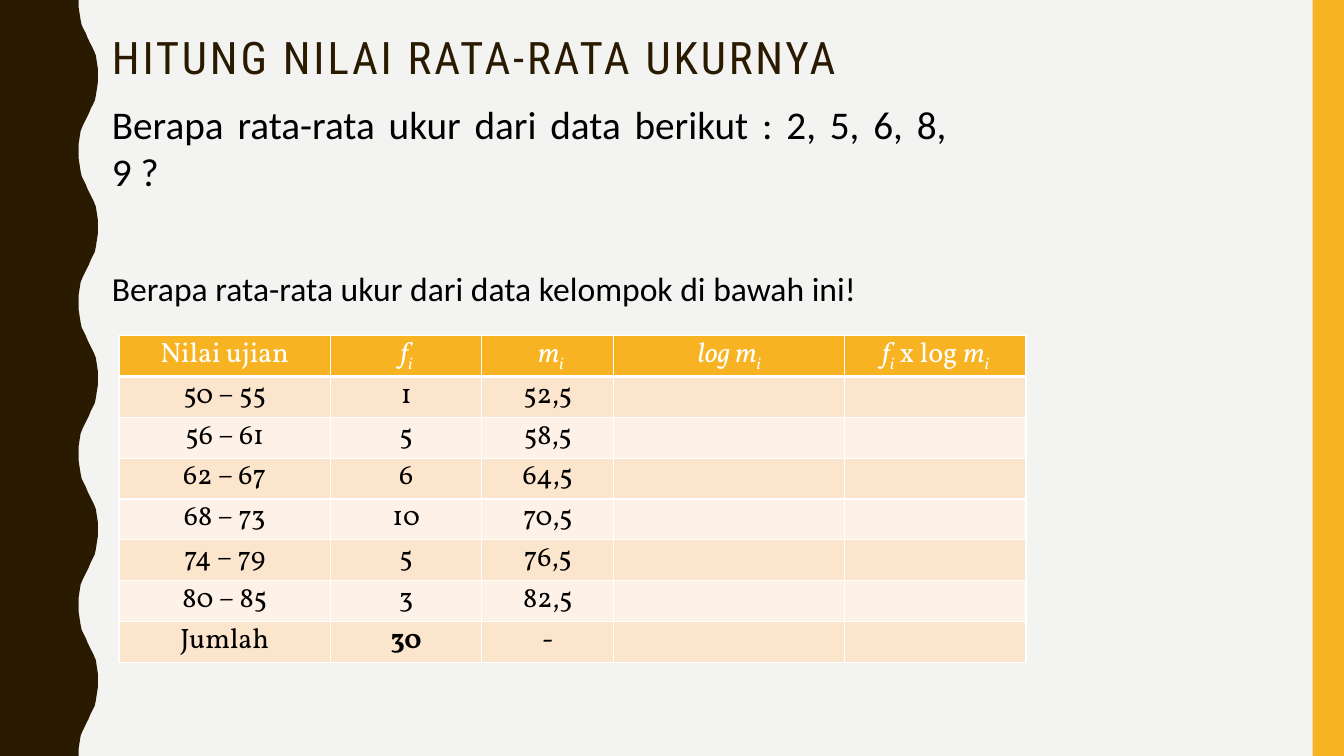
import lxml.etree
import pptx
import pptx.dml.color
import pptx.enum.shapes
import pptx.enum.text
import pptx.oxml.ns
import pptx.util

RGB = pptx.dml.color.RGBColor
PAPER = RGB(0xF3, 0xF3, 0xF2)
BROWN = RGB(0x2A, 0x1A, 0x00)
GOLD = RGB(0xF8, 0xB3, 0x23)
PEACH = RGB(0xFC, 0xE5, 0xCD)
CREAM = RGB(0xFE, 0xF2, 0xE8)
WHITE = RGB(0xFF, 0xFF, 0xFF)
BLACK = RGB(0x00, 0x00, 0x00)

ALIGN = pptx.enum.text.PP_ALIGN
ANCHOR = pptx.enum.text.MSO_ANCHOR
qn = pptx.oxml.ns.qn

# Half a wave as shares of the slide; the next half is its mirror
WAVE = [(5.85, 0), (5.85, 0.93), (5.93, 1.87), (6, 2.67), (6.08, 3.33),
        (6.23, 3.87), (6.38, 4.4), (6.53, 5.07), (6.68, 5.6), (6.83, 6.13),
        (6.98, 6.67), (7.13, 7.33), (7.2, 8.13), (7.28, 9.07)]
MIRROR = 13.13

# Table runs: text and mark (i = italic, s = italic subscript, b = bold)
F, M = [("f", "i"), ("i", "s")], [("m", "i"), ("i", "s")]
HEAD = [[("Nilai ujian", "")], F, [(" ", "")] + M, [("log ", "i")] + M,
        F + [(" x log ", "")] + M]
DATA = [("50 – 55", "1", "52,5"), ("56 – 61", "5", "58,5"),
        ("62 – 67", "6", "64,5"), ("68 – 73", "10", "70,5"),
        ("74 – 79", "5", "76,5"), ("80 – 85", "3", "82,5"),
        ("Jumlah", "30", "-")]
COLS = [15.75, 11.25, 9.83, 17.17, 13.5]
ROW = 5.4


def write(par, text, font, size, color, bold=False, italic=False, base=0, space=0):
    """Add one run with its format."""
    run = par.add_run()
    run.text = text
    style = run.font
    style.name, style.size = font, pptx.util.Pt(size)
    style.bold, style.italic = bold, italic
    style.color.rgb = color
    props = run._r.get_or_add_rPr()
    if base:
        props.set("baseline", str(base * 1000))
    if space:
        props.set("spc", str(space * 100))


class Slide:
    """Places elements by shares (0 to 100) of the slide's size."""

    def __init__(self, deck):
        self.wide, self.high = deck.slide_width, deck.slide_height
        self.page = deck.slides.add_slide(deck.slide_layouts.get_by_name("Two Content"))
        back = self.page.background.fill
        back.solid()
        back.fore_color.rgb = PAPER

    def across(self, share):
        return round(self.wide * share / 100)

    def down(self, share):
        return round(self.high * share / 100)

    def box(self, left, top, width, height):
        return self.across(left), self.down(top), self.across(width), self.down(height)

    def paint(self, shape, color):
        shape.shadow.inherit = False
        shape.fill.solid()
        shape.fill.fore_color.rgb = color
        shape.line.fill.background()

    def band(self, area, color):
        kind = pptx.enum.shapes.MSO_SHAPE.RECTANGLE
        self.paint(self.page.shapes.add_shape(kind, *self.box(*area)), color)

    def wave(self, color):
        edge = [(MIRROR - x if half % 2 else x, half * 10 + y)
                for half in range(10) for x, y in WAVE]
        edge += [(WAVE[0][0], 100), (0, 100)]
        form = self.page.shapes.build_freeform(0, 0)
        form.add_line_segments([(self.across(x), self.down(y)) for x, y in edge])
        self.paint(form.convert_to_shape(), color)

    def text(self, slot, area, text, align=ALIGN.LEFT, anchor=ANCHOR.TOP,
             lead=1.0, **style):
        shape = self.page.placeholders[slot]
        shape.left, shape.top, shape.width, shape.height = self.box(*area)
        frame = shape.text_frame
        frame.word_wrap = True
        frame.auto_size = pptx.enum.text.MSO_AUTO_SIZE.NONE
        frame.vertical_anchor = anchor
        par = frame.paragraphs[0]
        par.alignment, par.line_spacing = align, lead
        par.space_before = pptx.util.Pt(0)
        props = par._p.get_or_add_pPr()
        props.set("marL", "0")
        props.set("indent", "0")
        lxml.etree.SubElement(props, qn("a:buNone"))
        write(par, text, **style)

    def cell(self, cell, fill, runs, color=BLACK, foot=1):
        cell.margin_left = cell.margin_right = pptx.util.Inches(0.07)
        cell.margin_top = cell.margin_bottom = 0
        props = cell._tc.get_or_add_tcPr()
        for side, width in zip("LRTB", (1, 1, 1, foot)):
            line = lxml.etree.SubElement(props, qn("a:ln" + side), w=str(width * 12700))
            solid = lxml.etree.SubElement(line, qn("a:solidFill"))
            lxml.etree.SubElement(solid, qn("a:srgbClr"), val=str(WHITE))
        cell.fill.solid()
        cell.fill.fore_color.rgb = fill
        par = cell.text_frame.paragraphs[0]
        par.alignment = ALIGN.CENTER
        for text, mark in runs:
            write(par, text, "Vollkorn", 20, color, bold=mark == "b",
                  italic=mark in ("i", "s"), base=-25 if mark == "s" else 0)

    def table(self, left, top):
        count = len(DATA) + 1
        area = self.box(left, top, sum(COLS), ROW * count)
        grid = self.page.shapes.add_table(count, len(COLS), *area).table
        for col, share in zip(grid.columns, COLS):
            col.width = self.across(share)
        for row in grid.rows:
            row.height = self.down(ROW)
        for col, runs in enumerate(HEAD):
            self.cell(grid.cell(0, col), GOLD, runs, color=WHITE, foot=3)
        for row, data in enumerate(DATA, 1):
            for col in range(len(COLS)):
                mark = "b" if (row, col) == (len(DATA), 1) else ""
                runs = [(data[col], mark)] if col < len(data) else []
                self.cell(grid.cell(row, col), PEACH if row % 2 else CREAM, runs)


def main():
    deck = pptx.Presentation()
    deck.slide_width = pptx.util.Inches(13.33)
    deck.slide_height = pptx.util.Inches(7.5)
    slide = Slide(deck)

    # Side decoration
    slide.wave(BROWN)
    slide.band((97.67, 0, 2.33, 100), GOLD)

    # Title and questions
    slide.text(0, (7.58, 4, 80.12, 15.47), "HITUNG NILAI RATA-RATA UKURNYA", lead=0.9,
               font="Roboto Condensed", size=32, color=BROWN, space=2)
    slide.text(1, (7.58, 15.73, 63.62, 7.6),
               "Berapa rata-rata ukur dari data berikut : 2, 5, 6, 8, 9 ?",
               align=ALIGN.JUSTIFY, anchor=ANCHOR.MIDDLE,
               font="Calibri", size=28, color=BLACK)
    slide.text(2, (7.58, 34.8, 57.99, 6.67),
               "Berapa rata-rata ukur dari data kelompok di bawah ini!",
               font="Calibri", size=24, color=BLACK)

    # Grouped data
    slide.table(8.85, 44.4)
    deck.save("out.pptx")


if __name__ == "__main__":
    main()
